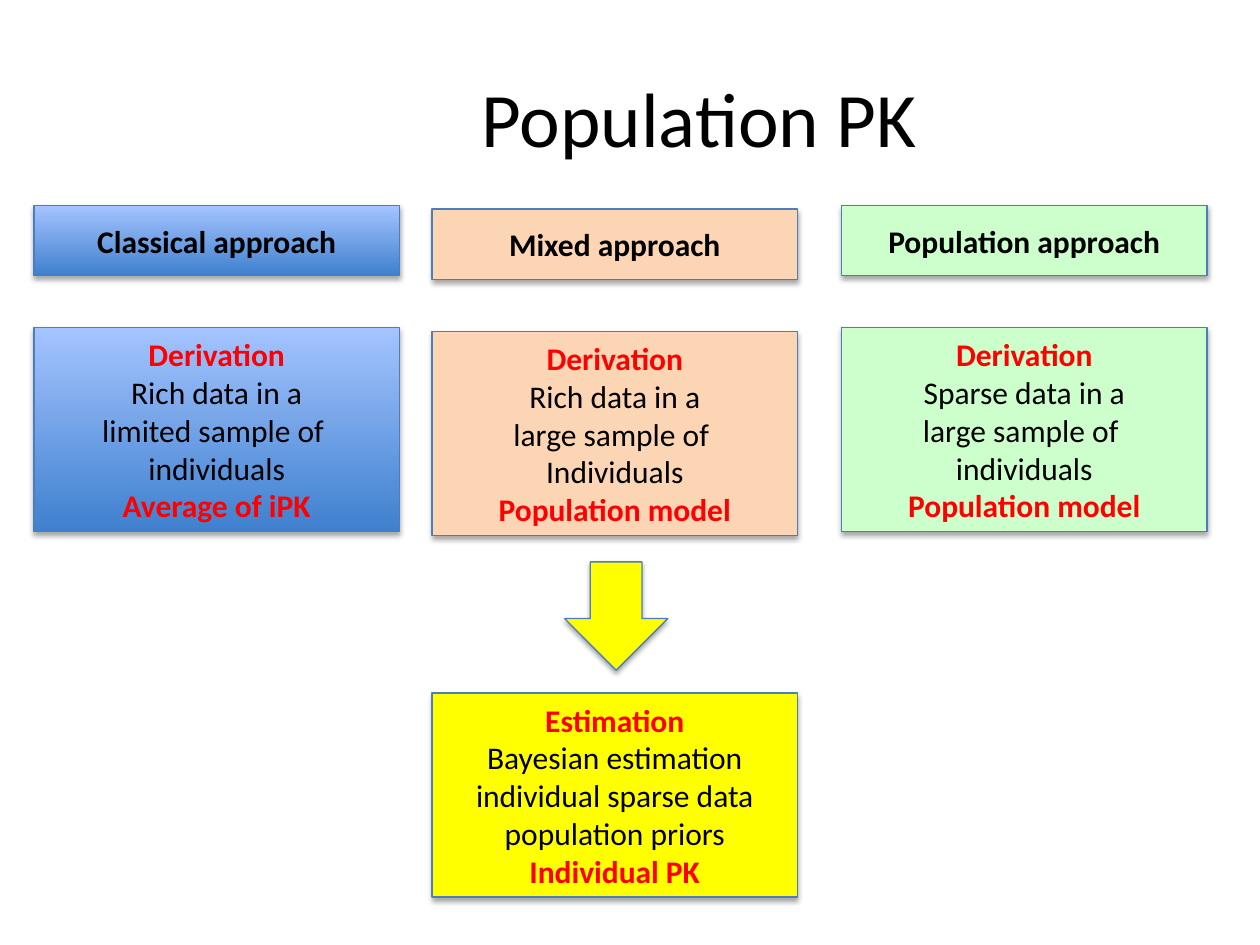
from dataclasses import dataclass

from lxml.etree import SubElement
from pptx import Presentation
from pptx.dml.color import RGBColor
from pptx.enum.shapes import MSO_SHAPE
from pptx.enum.text import MSO_ANCHOR, PP_ALIGN
from pptx.oxml.ns import qn
from pptx.util import Inches, Pt


@dataclass(frozen=True)
class Theme:
    font: str = "Calibri"
    title_size: int = 44
    body_size: int = 18
    text: str = "000000"
    accent: str = "FF0000"
    line: str = "4B7EBC"
    blue: tuple = ("3F80CE", "A4C4FF")
    peach: str = "FCD5B5"
    green: str = "CCFFCC"
    yellow: str = "FFFF00"


class SlideBuilder:
    def __init__(self, slide, theme):
        self.s = slide
        self.theme = theme

    def set_lines(self, tf, lines, size, color, bold=False):
        tf.word_wrap = True
        tf.vertical_anchor = MSO_ANCHOR.MIDDLE
        tf.text = "\n".join(lines)
        for p in tf.paragraphs:
            p.alignment = PP_ALIGN.CENTER
            for r in p.runs:
                self.style(r, size, color, bold)

    def style(self, r, size, color, bold):
        r.font.name = self.theme.font
        r.font.size = Pt(size)
        r.font.bold = bold
        r.font.color.rgb = RGBColor.from_string(color)

    def title(self, text, x, y, w, h):
        sp = self.s.shapes.add_textbox(Inches(x), Inches(y), Inches(w), Inches(h))
        self.set_lines(sp.text_frame, [text], self.theme.title_size, self.theme.text)

    def shape(self, kind, fill, x, y, w, h):
        """Add a shape; a pair of colours as fill runs from bottom to top."""
        sp = self.s.shapes.add_shape(kind, Inches(x), Inches(y), Inches(w), Inches(h))
        if isinstance(fill, tuple):
            sp.fill.gradient()
            sp.fill.gradient_angle = 90
            for stop, color in zip(sp.fill.gradient_stops, fill):
                stop.color.rgb = RGBColor.from_string(color)
        else:
            sp.fill.solid()
            sp.fill.fore_color.rgb = RGBColor.from_string(fill)
        sp.line.color.rgb = RGBColor.from_string(self.theme.line)
        sp.line.width = Pt(0.75)
        self.drop_shadow(sp)
        return sp

    def drop_shadow(self, sp):
        sp.shadow.inherit = False
        effects = sp._element.spPr.find(qn("a:effectLst"))
        shadow = SubElement(effects, qn("a:outerShdw"), blurRad=str(Pt(3.1)),
                            dist=str(Pt(1.8)), dir="5400000", rotWithShape="0")
        color = SubElement(shadow, qn("a:srgbClr"), val="000000")
        SubElement(color, qn("a:alpha"), val="35000")

    def heading(self, text, fill, x, y, w, h):
        sp = self.shape(MSO_SHAPE.RECTANGLE, fill, x, y, w, h)
        self.set_lines(sp.text_frame, [text], self.theme.body_size, self.theme.text, True)

    def detail(self, lines, fill, x, y, w, h):
        """Add a box whose first and last lines are emphasised."""
        sp = self.shape(MSO_SHAPE.RECTANGLE, fill, x, y, w, h)
        tf = sp.text_frame
        self.set_lines(tf, lines, self.theme.body_size, self.theme.text)
        for p in (tf.paragraphs[0], tf.paragraphs[-1]):
            self.style(p.runs[0], self.theme.body_size, self.theme.accent, True)


BOX_W, HEADING_H, DETAIL_H = 2.9, 0.56, 1.62
DETAIL_OFFSET = 0.97
MIXED_X = 3.43


def main():
    prs = Presentation()
    prs.slide_width, prs.slide_height = Inches(10), Inches(7.5)
    theme = Theme()
    b = SlideBuilder(prs.slides.add_slide(prs.slide_layouts[6]), theme)

    b.title("Population PK", 1.6, 0.3, 7.9, 1.25)

    approaches = [
        ("Classical approach", theme.blue, 0.27, 1.63,
         ["Rich data in a", "limited sample of ", "individuals", "Average of iPK"]),
        ("Population approach", theme.green, 6.68, 1.63,
         ["Sparse data in a", "large sample of ", "individuals", "Population model"]),
        ("Mixed approach", theme.peach, MIXED_X, 1.66,
         ["Rich data in a", "large sample of ", "Individuals", "Population model"]),
    ]
    for name, fill, x, y, lines in approaches:
        b.heading(name, fill, x, y, BOX_W, HEADING_H)
        b.detail(["Derivation", *lines], fill, x, y + DETAIL_OFFSET, BOX_W, DETAIL_H)

    estimation = ["Estimation", "Bayesian estimation",
                  "individual sparse data population priors", "Individual PK"]
    b.detail(estimation, theme.yellow, MIXED_X, 5.5, BOX_W, DETAIL_H)
    b.shape(MSO_SHAPE.DOWN_ARROW, theme.yellow, 4.48, 4.46, 0.82, 0.86)

    prs.save("out.pptx")


if __name__ == "__main__":
    main()
